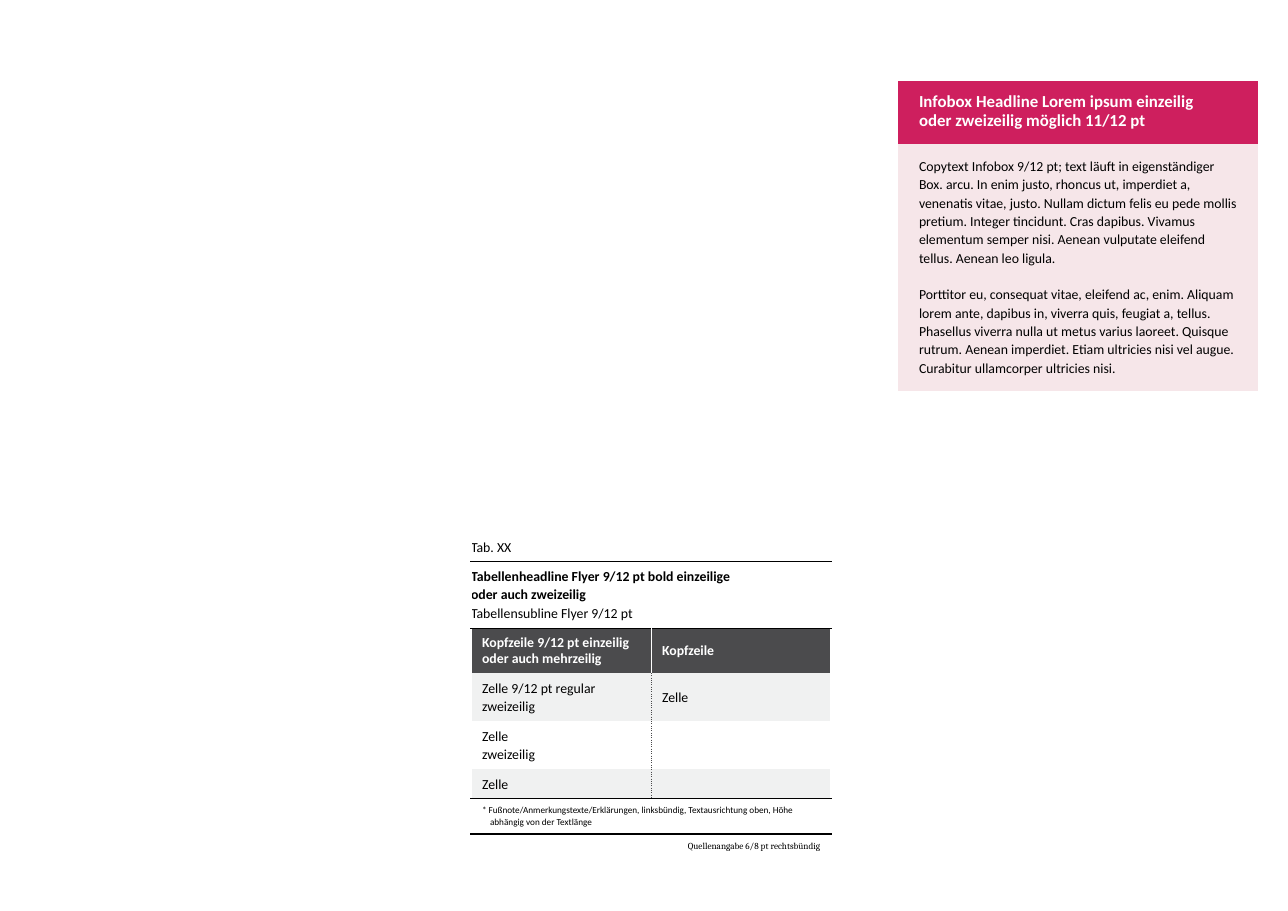
import pptx
import pptx.util
import pptx.dml.color
import pptx.enum.text
import pptx.oxml.ns
from lxml import etree

PX = 8298
BLACK = pptx.dml.color.RGBColor(0, 0, 0)
WHITE = pptx.dml.color.RGBColor(255, 255, 255)
CHARCOAL = pptx.dml.color.RGBColor(0x4B, 0x4B, 0x4D)
PALE_GREY = pptx.dml.color.RGBColor(0xF0, 0xF1, 0xF1)
MAGENTA = pptx.dml.color.RGBColor(0xCE, 0x1F, 0x5E)
PALE_PINK = pptx.dml.color.RGBColor(0xF6, 0xE6, 0xE9)
NO_STYLE = "{2D5ABB26-0587-4C30-8999-92F81FD0307C}"
MIDDLE = pptx.enum.text.MSO_ANCHOR.MIDDLE
qn = pptx.oxml.ns.qn

deck = pptx.Presentation()
deck.slide_width = 1288 * PX
deck.slide_height = 911 * PX
slide = deck.slides.add_slide(deck.slide_layouts[6])


def plain_table(left, top, widths, heights):
    frame = slide.shapes.add_table(len(heights), len(widths), left * PX, top * PX,
                                   sum(widths) * PX, sum(heights) * PX)
    table = frame.table
    table.first_row = table.horz_banding = False
    table._tbl.tblPr.find(qn("a:tableStyleId")).text = NO_STYLE
    for column, width in zip(table.columns, widths):
        column.width = width * PX
    for row, height in zip(table.rows, heights):
        row.height = height * PX
    return table


def write(cell, lines, size, color, leading=None, font="Calibri"):
    frame = cell.text_frame
    for index, (text, bold) in enumerate(lines):
        paragraph = frame.add_paragraph() if index else frame.paragraphs[0]
        if leading:
            paragraph.line_spacing = pptx.util.Pt(leading)
        run = paragraph.add_run()
        run.text = text
        run.font.name = font
        run.font.size = pptx.util.Pt(size)
        run.font.bold = bold
        run.font.color.rgb = color
    if not lines:
        etree.SubElement(frame.paragraphs[0]._p, qn("a:endParaRPr"), sz=str(size * 100))


caption = [("Tab. XX", False)]
headline = [("Tabellenheadline Flyer 9/12 pt bold einzeilige", True),
            ("oder auch zweizeilig", True),
            ("Tabellensubline Flyer 9/12 pt", False)]
column_heads = [("Kopfzeile 9/12 pt einzeilig", True), ("oder auch mehrzeilig", True)]
footnote = [("* Fußnote/Anmerkungstexte/Erklärungen, linksbündig, Textausrichtung oben, "
             "Höhe abhängig von der Textlänge", False)]
source_note = [("Quellenangabe 6/8 pt rechtsbündig", False)]
data_rows = [
    (caption, []),
    (headline, []),
    (column_heads, [("Kopfzeile", True)]),
    ([("Zelle 9/12 pt regular", False), ("zweizeilig", False)], [("Zelle", False)]),
    ([("Zelle", False), ("zweizeilig", False)], []),
    ([("Zelle", False)], []),
    (footnote, []),
    (source_note, []),
]
row_fills = [None, None, CHARCOAL, PALE_GREY, WHITE, PALE_GREY, None, None]
edge = (WHITE, 1, "solid")
dotted = (CHARCOAL, 0.5, "sysDot")
dividers = [edge, edge, (WHITE, 0.75, "solid"), dotted, dotted, dotted, edge, edge]
rules_below = {0: (BLACK, 1, "solid"), 5: (BLACK, 0.5, "solid"), 6: (BLACK, 1, "solid")}

data_table = plain_table(471, 532, [180, 180], [29, 67, 44, 48, 48, 29, 35, 29])
for r, texts in enumerate(data_rows):
    in_body = 2 <= r <= 5
    if not in_body:
        data_table.cell(r, 0).merge(data_table.cell(r, 1))
    for c, lines in enumerate(texts):
        cell = data_table.cell(r, c)
        write(cell, lines, 6 if r > 5 else 9, WHITE if r == 2 else BLACK,
              {2: None, 6: 8, 7: 8}.get(r, 12), "Cambria" if r == 7 else "Calibri")
        if in_body:
            cell.vertical_anchor = MIDDLE
        if r < 2:
            cell.margin_left = cell.margin_right = 0
        inner_right = dividers[r] if in_body and c == 0 else edge
        borders = {"L": dividers[r] if c else edge, "R": inner_right,
                   "T": rules_below.get(r - 1), "B": rules_below.get(r)}
        for side, border in borders.items():
            if border:
                color, width, dash = border
                line = etree.SubElement(cell._tc.get_or_add_tcPr(), qn("a:ln" + side),
                                        w=str(int(width * 12700)))
                paint = etree.SubElement(line, qn("a:solidFill"))
                etree.SubElement(paint, qn("a:srgbClr"), val=str(color))
                etree.SubElement(line, qn("a:prstDash"), val=dash)
        if row_fills[r] is None:
            cell.fill.background()
        else:
            cell.fill.solid()
            cell.fill.fore_color.rgb = row_fills[r]

footnote_format = data_table.cell(6, 0).text_frame.paragraphs[0]._p.get_or_add_pPr()
footnote_format.set("marL", str(8 * PX))
footnote_format.set("indent", str(-8 * PX))
source_paragraph = data_table.cell(7, 0).text_frame.paragraphs[0]
source_paragraph.alignment = pptx.enum.text.PP_ALIGN.RIGHT

infobox_head = [("Infobox Headline Lorem ipsum einzeilig", True),
                ("oder zweizeilig möglich 11/12 pt", True)]
infobox_copy = [
    ("Copytext Infobox 9/12 pt; text läuft in eigenständiger Box. arcu. In enim justo, "
     "rhoncus ut, imperdiet a, venenatis vitae, justo. Nullam dictum felis eu pede mollis "
     "pretium. Integer tincidunt. Cras dapibus. Vivamus elementum semper nisi. Aenean "
     "vulputate eleifend tellus. Aenean leo ligula.", False),
    ("Porttitor eu, consequat vitae, eleifend ac, enim. Aliquam lorem ante, dapibus in, "
     "viverra quis, feugiat a, tellus. Phasellus viverra nulla ut metus varius laoreet. "
     "Quisque rutrum. Aenean imperdiet. Etiam ultricies nisi vel augue. Curabitur "
     "ullamcorper ultricies nisi.", False),
]
infobox = plain_table(898, 81, [360], [62, 247])
infobox_parts = [(infobox_head, 11, WHITE, MAGENTA), (infobox_copy, 9, BLACK, PALE_PINK)]
for r, (lines, size, color, fill) in enumerate(infobox_parts):
    cell = infobox.cell(r, 0)
    write(cell, lines, size, color, 12)
    cell.margin_left = cell.margin_right = 21 * PX
    cell.margin_top = cell.margin_bottom = 13 * PX
    cell.fill.solid()
    cell.fill.fore_color.rgb = fill
infobox.cell(0, 0).vertical_anchor = MIDDLE
infobox.cell(1, 0).text_frame.paragraphs[1].space_before = pptx.util.Pt(12)

deck.save("out.pptx")
